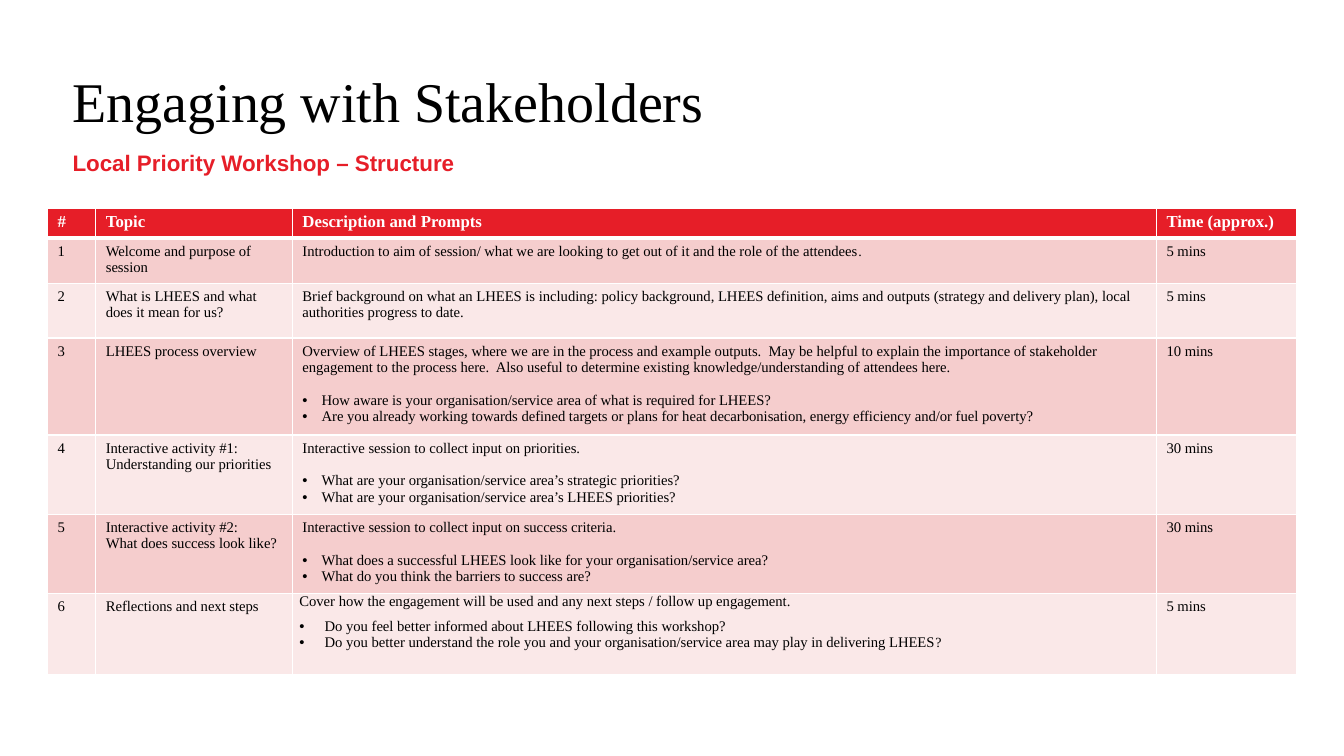
"""Build the workshop structure slide for engaging with stakeholders."""
from dataclasses import dataclass

import lxml.etree
import pptx
import pptx.dml.color
import pptx.enum.text
import pptx.oxml.ns
import pptx.util

WIDTH, HEIGHT = pptx.util.Inches(13.33), pptx.util.Inches(7.5)
COLOURS = {"black": "000000", "white": "FFFFFF", "red": "E61E28",
           "rose": "F5CDCD", "blush": "FAE8E8"}
SERIF, SANS = "Times New Roman", "Arial"
COLUMN_SHARES = (3.6, 14.63, 64.29, 10.43)
HEADINGS = ("#", "Topic", "Description and Prompts", "Time (approx.)")
HEADING_SHARE = 3.77


@dataclass(frozen=True)
class Session:
    topic: tuple[str, ...]
    summary: str
    minutes: int
    share: float
    prompts: tuple[str, ...] = ()
    small_end: str = ""
    prompt_gap: float = 11.7
    prompt_indent: float = 0.19
    tight: bool = False


SESSIONS = (
    Session(("Welcome and purpose of session",),
            "Introduction to aim of session/ what we are looking to get out of it "
            "and the role of the attendees", 5, 5.65, small_end="."),
    Session(("What is LHEES and what does it mean for us?",),
            "Brief background on what an LHEES is including: policy background, LHEES "
            "definition, aims and outputs (strategy and delivery plan), local "
            "authorities progress to date.", 5, 7.2),
    Session(("LHEES process overview",),
            "Overview of LHEES stages, where we are in the process and example outputs.  "
            "May be helpful to explain the importance of stakeholder engagement to the "
            "process here.  Also useful to determine existing knowledge/understanding of "
            "attendees here.", 10, 12.2,
            ("How aware is your organisation/service area of what is required for LHEES?",
             "Are you already working towards defined targets or plans for heat "
             "decarbonisation, energy efficiency and/or fuel poverty?")),
    Session(("Interactive activity #1: Understanding our priorities",),
            "Interactive session to collect input on priorities.", 30, 9.93,
            ("What are your organisation/service area’s strategic priorities?",
             "What are your organisation/service area’s LHEES priorities?")),
    Session(("Interactive activity #2:", "What does success look like?"),
            "Interactive session to collect input on success criteria.", 30, 9.93,
            ("What does a successful LHEES look like for your organisation/service area?",
             "What do you think the barriers to success are?")),
    Session(("Reflections and next steps",),
            "Cover how the engagement will be used and any next steps / follow up "
            "engagement.", 5, 10.75,
            ("Do you feel better informed about LHEES following this workshop?",
             "Do you better understand the role you and your organisation/service area "
             "may play in delivering LHEES"),
            small_end="?", prompt_gap=6, prompt_indent=0.25, tight=True),
)


def across(share: float) -> int:
    return round(WIDTH * share / 100)


def down(share: float) -> int:
    return round(HEIGHT * share / 100)


def rgb(colour: str) -> pptx.dml.color.RGBColor:
    return pptx.dml.color.RGBColor.from_string(COLOURS[colour])


def write(frame, text: str, *, size: float = 10.5, font: str = SERIF,
          colour: str = "black", bold: bool = False, small_end: str = "",
          after: float = 0, indent: float = 0, leading: float | None = None) -> None:
    paragraph = frame.add_paragraph() if frame.text else frame.paragraphs[0]
    if indent:
        properties = paragraph._p.get_or_add_pPr()
        hang = pptx.util.Inches(indent)
        properties.set("marL", str(hang))
        properties.set("indent", str(-hang))
        for tag, key, value in (("a:buFont", "typeface", SANS), ("a:buChar", "char", "•")):
            lxml.etree.SubElement(properties, pptx.oxml.ns.qn(tag)).set(key, value)
    paragraph.space_after = pptx.util.Pt(after)
    if leading:
        paragraph.line_spacing = pptx.util.Pt(leading)
    for words, points in ((text, size), (small_end, 10)):
        if words:
            run = paragraph.add_run()
            run.text = words
            run.font.size = pptx.util.Pt(points)
            run.font.name = font
            run.font.bold = bold
            run.font.color.rgb = rgb(colour)


def add_heading(slide, text: str, left: float, top: float, width: float,
                height: float, **style) -> None:
    frame = slide.shapes.add_textbox(
        across(left), down(top), across(width), down(height)).text_frame
    frame.margin_left = frame.margin_top = frame.margin_right = frame.margin_bottom = 0
    frame.word_wrap = True
    write(frame, text, **style)


def paint(cell, colour: str, above: float = 1, below: float = 1) -> None:
    properties = cell._tc.get_or_add_tcPr()
    for side, points in (("L", 1), ("R", 1), ("T", above), ("B", below)):
        edge = lxml.etree.SubElement(properties, pptx.oxml.ns.qn(f"a:ln{side}"))
        edge.set("w", str(pptx.util.Pt(points)))
        fill = lxml.etree.SubElement(edge, pptx.oxml.ns.qn("a:solidFill"))
        lxml.etree.SubElement(fill, pptx.oxml.ns.qn("a:srgbClr")).set("val", COLOURS["white"])
    cell.fill.solid()
    cell.fill.fore_color.rgb = rgb(colour)


def describe(cell, session: Session) -> None:
    if session.tight:
        cell.margin_left = cell.margin_right = pptx.util.Inches(0.07)
        cell.margin_top = cell.margin_bottom = 0
    prompts = session.prompts
    write(cell.text_frame, session.summary,
          after=session.prompt_gap if prompts else 0,
          small_end="" if prompts else session.small_end)
    for prompt in prompts:
        write(cell.text_frame, prompt, indent=session.prompt_indent,
              small_end=session.small_end if prompt == prompts[-1] else "")


def add_agenda(slide) -> None:
    row_shares = (HEADING_SHARE, *(session.share for session in SESSIONS))
    agenda = slide.shapes.add_table(
        len(row_shares), len(COLUMN_SHARES), across(3.53), down(27.5),
        across(sum(COLUMN_SHARES)), down(sum(row_shares))).table
    agenda.horz_banding = False
    for column, share in zip(agenda.columns, COLUMN_SHARES):
        column.width = across(share)
    for row, share in zip(agenda.rows, row_shares):
        row.height = down(share)
    for column, heading in enumerate(HEADINGS):
        cell = agenda.cell(0, column)
        paint(cell, "red", below=3)
        write(cell.text_frame, heading, size=12, colour="white", bold=True)
    for number, session in enumerate(SESSIONS, 1):
        order, topic, description, time = agenda.rows[number].cells
        for cell in (order, topic, description, time):
            paint(cell, "rose" if number % 2 else "blush", above=3 if number == 1 else 1)
        write(order.text_frame, str(number))
        for line in session.topic:
            write(topic.text_frame, line)
        describe(description, session)
        write(time.text_frame, f"{session.minutes} mins")


def main() -> None:
    deck = pptx.Presentation()
    deck.slide_width, deck.slide_height = WIDTH, HEIGHT
    slide = deck.slides.add_slide(deck.slide_layouts[6])
    add_heading(slide, "Engaging with Stakeholders", 5.4, 9.6, 74.04, 7.73,
                size=40, leading=44)
    add_heading(slide, "Local Priority Workshop – Structure", 5.4, 19.73, 43.66, 3.6,
                size=16, font=SANS, colour="red", bold=True, after=9)
    add_agenda(slide)
    deck.save("out.pptx")


if __name__ == "__main__":
    main()
